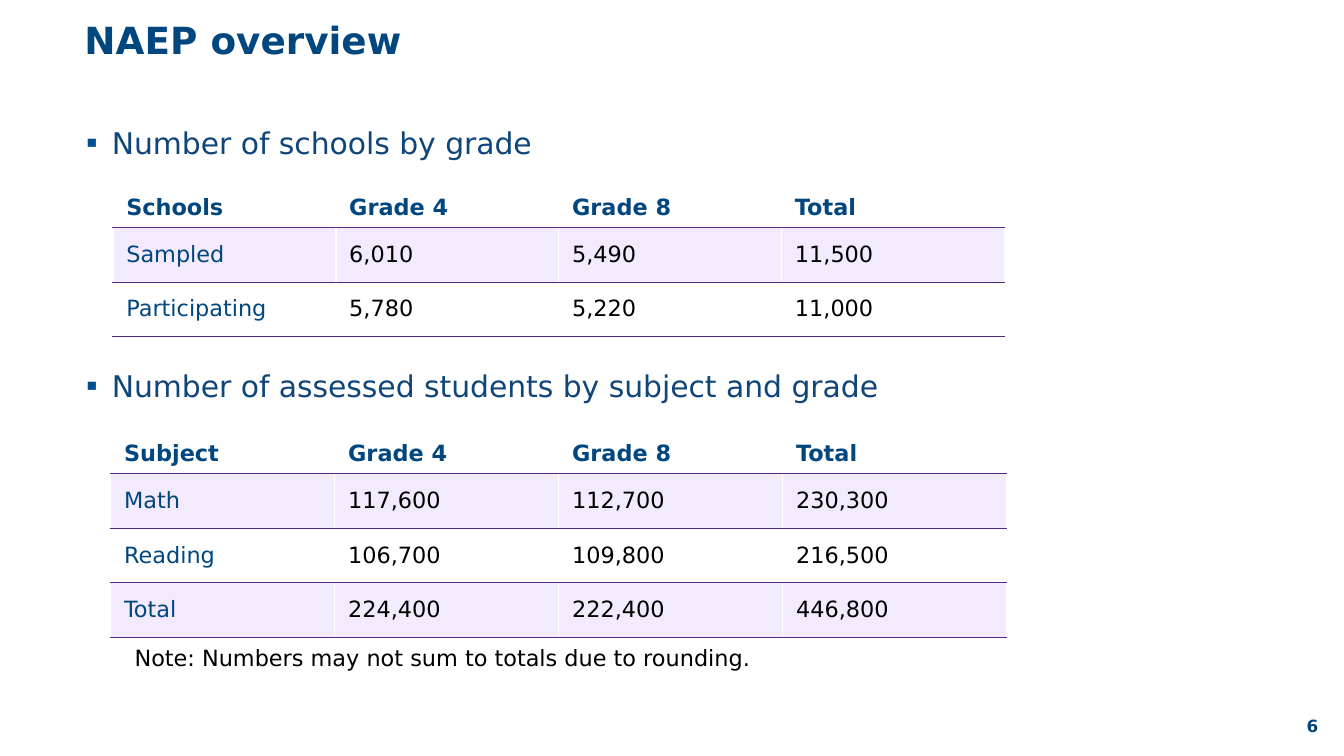
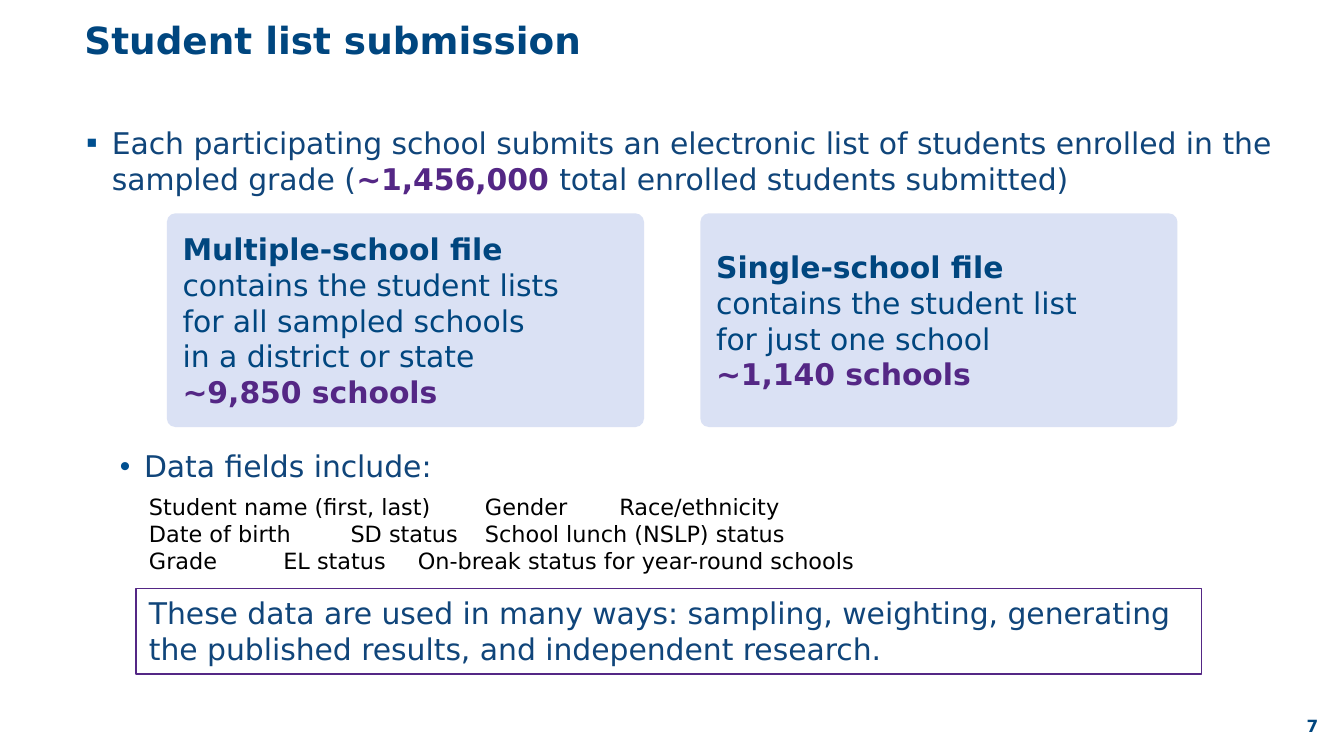
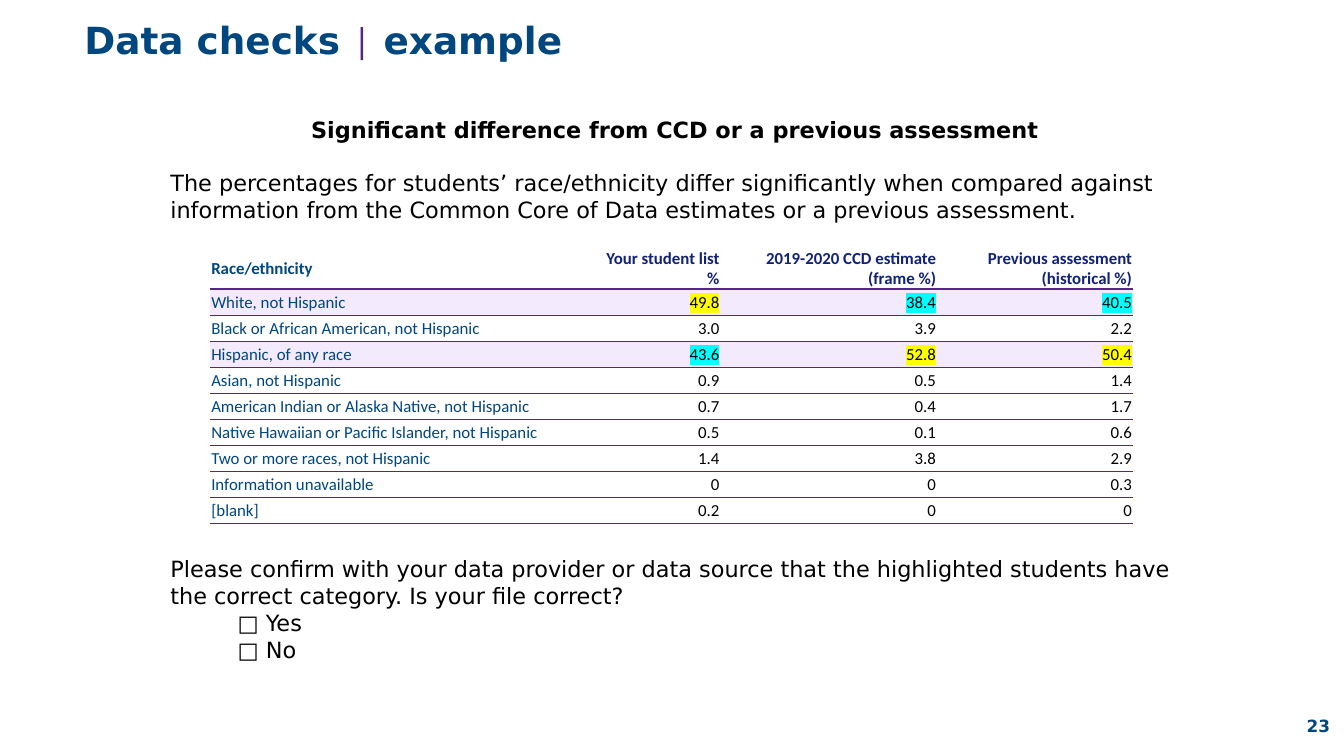
from dataclasses import dataclass, field
from typing import Optional

from lxml import etree
from pptx import Presentation
from pptx.dml.color import RGBColor
from pptx.enum.shapes import MSO_SHAPE
from pptx.enum.text import MSO_ANCHOR, MSO_AUTO_SIZE, PP_ALIGN
from pptx.oxml.ns import qn
from pptx.util import Pt

LEFT, CENTER, RIGHT = PP_ALIGN.LEFT, PP_ALIGN.CENTER, PP_ALIGN.RIGHT
TOP, MIDDLE, BOTTOM = MSO_ANCHOR.TOP, MSO_ANCHOR.MIDDLE, MSO_ANCHOR.BOTTOM
GROW, FIXED = MSO_AUTO_SIZE.SHAPE_TO_FIT_TEXT, MSO_AUTO_SIZE.NONE
RECT, ROUND_RECT = MSO_SHAPE.RECTANGLE, MSO_SHAPE.ROUNDED_RECTANGLE
TITLE_ONLY, TITLE_AND_BODY = 5, 1


@dataclass(frozen=True)
class Theme:
    navy: str = "00467F"
    body: str = "10457A"
    bullet: str = "004F90"
    header: str = "112277"
    purple: str = "542785"
    lavender: str = "F3EAFD"
    card: str = "C2CDED"
    white: str = "FFFFFF"
    black: str = "000000"
    yellow: str = "FFFF00"
    cyan: str = "00FFFF"
    font: str = "DejaVu Sans"
    narrow: str = "Calibri"
    title_size: int = 20
    body_size: int = 16
    text_size: int = 12
    small_size: int = 9


T = Theme()


@dataclass(frozen=True)
class Box:
    left: float
    top: float
    width: float
    height: float

    def lengths(self) -> tuple:
        return Pt(self.left), Pt(self.top), Pt(self.width), Pt(self.height)


@dataclass(frozen=True)
class Piece:
    text: str
    color: str = T.body
    bold: bool = False
    font: str = T.font


@dataclass(frozen=True)
class Bullet:
    pieces: list
    char: str = "▪"
    level: int = 0
    margin: float = 18.7
    hang: float = 13.7
    scale: int = 110
    before: float = 0


@dataclass(frozen=True)
class Line:
    text: str
    bold: bool = False
    align: PP_ALIGN = LEFT
    before: float = 0
    margin: float = 0
    tabs: tuple = ()


@dataclass(frozen=True)
class Grid:
    box: Box
    widths: list
    heights: list
    rows: list
    shaded: tuple
    header_rule: float
    sides: Optional[str] = T.white
    header_anchor: MSO_ANCHOR = BOTTOM
    header_color: str = T.navy
    align: PP_ALIGN = LEFT
    font: str = T.font
    size: float = T.text_size
    inset: Optional[float] = None
    marks: dict = field(default_factory=dict)


TITLE_BOX = Box(38, 0, 660, 45)
BODY_BOX = Box(34, 63, 656, 301)
NUMBER_BOX = Box(700, 378, 20, 21.6)


def rgb(color: str) -> RGBColor:
    return RGBColor.from_string(color)


def style(r, size: float, color: str, bold: bool = False, font: str = T.font) -> None:
    r.font.size, r.font.bold, r.font.name = Pt(size), bold, font
    r.font.color.rgb = rgb(color)


def write(p, pieces: list, size: float) -> None:
    for piece in pieces:
        r = p.add_run()
        r.text = piece.text
        style(r, size, piece.color, piece.bold, piece.font)


def add_color(parent, color: str):
    fill = etree.SubElement(parent, qn("a:solidFill"))
    return etree.SubElement(fill, qn("a:srgbClr"), val=color)


def set_margin(p, margin: float, hang: float = 0) -> None:
    pPr = p._p.get_or_add_pPr()
    pPr.set("marL", str(Pt(margin)))
    pPr.set("indent", str(-Pt(hang)))


def add_title(s, pieces: list) -> None:
    sp = s.shapes.title
    sp.left, sp.top, sp.width, sp.height = TITLE_BOX.lengths()
    tf = sp.text_frame
    tf.auto_size, tf.vertical_anchor = FIXED, MIDDLE
    p = tf.paragraphs[0]
    p.alignment, p.line_spacing = LEFT, 0.9
    write(p, pieces, T.title_size)


def add_number(s, number: int) -> None:
    tf = s.shapes.add_textbox(*NUMBER_BOX.lengths()).text_frame
    tf.margin_left = tf.margin_right = 0
    tf.vertical_anchor = MIDDLE
    tf.text = str(number)
    style(tf.paragraphs[0].runs[0], T.small_size, T.navy, True)


def add_slide(prs, layout: int, title: list, number: int):
    s = prs.slides.add_slide(prs.slide_layouts[layout])
    add_title(s, title)
    add_number(s, number)
    return s


def add_body(s, bullets: list) -> None:
    sp = s.placeholders[1]
    sp.left, sp.top, sp.width, sp.height = BODY_BOX.lengths()
    tf = sp.text_frame
    tf.auto_size = FIXED
    for i, bullet in enumerate(bullets):
        p = tf.add_paragraph() if i else tf.paragraphs[0]
        set_margin(p, bullet.margin, bullet.hang)
        pPr = p._p.get_or_add_pPr()
        etree.SubElement(etree.SubElement(pPr, qn("a:buClr")), qn("a:srgbClr"), val=T.bullet)
        etree.SubElement(pPr, qn("a:buSzPct"), val=str(bullet.scale * 1000))
        etree.SubElement(pPr, qn("a:buChar"), char=bullet.char)
        p.level = bullet.level
        p.space_before, p.space_after = Pt(bullet.before), Pt(6)
        write(p, bullet.pieces, T.body_size)


def add_text(s, box: Box, lines: list) -> None:
    tf = s.shapes.add_textbox(*box.lengths()).text_frame
    tf.word_wrap, tf.auto_size = True, GROW
    for i, line in enumerate(lines):
        p = tf.add_paragraph() if i else tf.paragraphs[0]
        p.text = line.text
        set_margin(p, line.margin)
        if line.tabs:
            tab_list = etree.SubElement(p._p.get_or_add_pPr(), qn("a:tabLst"))
            for tab in line.tabs:
                etree.SubElement(tab_list, qn("a:tab"), pos=str(Pt(tab)), algn="l")
        p.alignment = line.align
        if line.before:
            p.space_before = Pt(line.before)
        style(p.runs[0], T.text_size, T.black, line.bold)


def add_panel(s, kind: MSO_SHAPE, box: Box, text: str, anchor: MSO_ANCHOR):
    sp = s.shapes.add_shape(kind, *box.lengths())
    sp.shadow.inherit = False
    tf = sp.text_frame
    tf.word_wrap, tf.vertical_anchor = True, anchor
    tf.paragraphs[0].text = text
    tf.paragraphs[0].alignment = LEFT
    return sp


def add_card(s, box: Box, lines: list) -> None:
    """Translucent card: bold heading first, purple count last."""
    sp = add_panel(s, ROUND_RECT, box, "\v".join(lines), MIDDLE)
    sp.adjustments[0] = 0.04
    sp.line.fill.background()
    sp.fill.solid()
    sp.fill.fore_color.rgb = rgb(T.card)
    color = sp._element.spPr.find(qn("a:solidFill")).find(qn("a:srgbClr"))
    etree.SubElement(color, qn("a:alpha"), val="60000")
    heading, *details, count = sp.text_frame.paragraphs[0].runs
    style(heading, T.body_size, T.navy, True)
    for r in details:
        style(r, T.body_size, T.navy)
    style(count, T.body_size, T.purple, True)


def add_callout(s, box: Box, text: str) -> None:
    sp = add_panel(s, RECT, box, text, TOP)
    sp.fill.background()
    sp.line.color.rgb, sp.line.width = rgb(T.purple), Pt(1)
    style(sp.text_frame.paragraphs[0].runs[0], T.body_size, T.body)


def set_border(cell, edge: str, color: Optional[str], width: float) -> None:
    ln = etree.SubElement(cell._tc.get_or_add_tcPr(), qn(f"a:ln{edge}"), w=str(Pt(width)))
    if color:
        add_color(ln, color)
    else:
        etree.SubElement(ln, qn("a:noFill"))


def format_cell(cell, grid: Grid, row: int, col: int) -> None:
    above = {0: 1, 1: grid.header_rule}.get(row, 0.5)
    below = 0.5 if row else grid.header_rule
    set_border(cell, "L", grid.sides, 1)
    set_border(cell, "R", grid.sides, 1)
    set_border(cell, "T", T.purple if row else grid.sides, above)
    set_border(cell, "B", T.purple, below)
    if row in grid.shaded:
        cell.fill.solid()
        cell.fill.fore_color.rgb = rgb(T.lavender)
    else:
        cell.fill.background()
    if grid.inset is not None:
        cell.margin_left = cell.margin_right = cell.margin_top = Pt(grid.inset)
        cell.margin_bottom = 0
    cell.vertical_anchor = MIDDLE if row else grid.header_anchor
    p = cell.text_frame.paragraphs[0]
    p.alignment = grid.align if col else LEFT
    color = T.navy
    if col:
        color = T.black if row else grid.header_color
    r = p.runs[0]
    style(r, grid.size, color, row == 0, grid.font)
    if (row, col) in grid.marks:
        highlight = etree.Element(qn("a:highlight"))
        etree.SubElement(highlight, qn("a:srgbClr"), val=grid.marks[row, col])
        r._r.rPr.find(qn("a:solidFill")).addnext(highlight)


def add_grid(s, grid: Grid) -> None:
    table = s.shapes.add_table(len(grid.rows), len(grid.widths), *grid.box.lengths()).table
    table.first_row = table.horz_banding = False
    for column, width in zip(table.columns, grid.widths):
        column.width = Pt(width)
    for i, (values, height) in enumerate(zip(grid.rows, grid.heights)):
        table.rows[i].height = Pt(height)
        for j, value in enumerate(values):
            cell = table.cell(i, j)
            cell.text_frame.text = value
            format_cell(cell, grid, i, j)


def heading(text: str) -> Piece:
    return Piece(text, T.navy, True)


def overview_slide(prs) -> None:
    s = add_slide(prs, TITLE_AND_BODY, [heading("NAEP overview")], 6)
    add_body(s, [
        Bullet([Piece("Number of schools by grade")]),
        Bullet([Piece("Number of assessed students by subject and grade")], before=105),
    ])
    schools = [
        ("Schools", "Grade 4", "Grade 8", "Total"),
        ("Sampled", "6,010", "5,490", "11,500"),
        ("Participating", "5,780", "5,220", "11,000"),
    ]
    students = [
        ("Subject", "Grade 4", "Grade 8", "Total"),
        ("Math", "117,600", "112,700", "230,300"),
        ("Reading", "106,700", "109,800", "216,500"),
        ("Total", "224,400", "222,400", "446,800"),
    ]
    row_height = 29.2
    add_grid(s, Grid(Box(60.5, 92.7, 477.6, 3 * row_height), [119.4] * 4, [row_height] * 3,
                     schools, shaded=(1,), header_rule=1))
    add_grid(s, Grid(Box(59.3, 224.6, 480, 4 * row_height), [120] * 4, [row_height] * 4,
                     students, shaded=(1, 3), header_rule=0.5))
    add_text(s, Box(65, 341.5, 387, 21.8),
             [Line("Note: Numbers may not sum to totals due to rounding.")])


def submission_slide(prs) -> None:
    s = add_slide(prs, TITLE_AND_BODY, [heading("Student list submission")], 7)
    add_body(s, [
        Bullet([
            Piece("Each participating school submits an electronic list of students "
                  "enrolled in the sampled grade ("),
            Piece("~1,456,000 ", T.purple, True),
            Piece("total enrolled students submitted)"),
        ]),
        Bullet([Piece("Data fields include:")], "•", 1, 36, 13, 100, 129),
    ])
    cards = [
        ["Multiple-school file", "contains the student lists", "for all sampled schools",
         "in a district or state", "~9,850 schools"],
        ["Single-school file", "contains the student list", "for just one school",
         "~1,140 schools"],
    ]
    for i, lines in enumerate(cards):
        add_card(s, Box(89.4 + 285.8 * i, 114.3, 255.6, 114.5), lines)
    fields = [
        ("Student name (first, last)", "Gender", "Race/ethnicity"),
        ("Date of birth", "SD status", "School lunch (NSLP) status"),
        ("Grade", "EL status", "On-break status for year-round schools"),
    ]
    add_text(s, Box(72.7, 260.9, 558, 51),
             [Line("\t".join(names), tabs=(180, 288)) for names in fields])
    add_callout(s, Box(72.7, 315.3, 571, 46),
                "These data are used in many ways: sampling, weighting, generating "
                "the published results, and independent research.")


def checks_slide(prs) -> None:
    title = [heading("Data checks "), Piece("|", T.purple, font=T.narrow), heading(" example")]
    s = add_slide(prs, TITLE_ONLY, title, 23)
    rows = [
        ("Race/ethnicity", "Your student list %", "2019-2020 CCD estimate (frame %)",
         "Previous assessment (historical %)"),
        ("White, not Hispanic", "49.8", "38.4", "40.5"),
        ("Black or African American, not Hispanic", "3.0", "3.9", "2.2"),
        ("Hispanic, of any race", "43.6", "52.8", "50.4"),
        ("Asian, not Hispanic", "0.9", "0.5", "1.4"),
        ("American Indian or Alaska Native, not Hispanic", "0.7", "0.4", "1.7"),
        ("Native Hawaiian or Pacific Islander, not Hispanic", "0.5", "0.1", "0.6"),
        ("Two or more races, not Hispanic", "1.4", "3.8", "2.9"),
        ("Information unavailable", "0", "0", "0.3"),
        ("[blank]", "0.2", "0", "0"),
    ]
    marks = {(1, 1): T.yellow, (1, 2): T.cyan, (1, 3): T.cyan,
             (3, 1): T.cyan, (3, 2): T.yellow, (3, 3): T.yellow}
    add_grid(s, Grid(Box(112.5, 132.5, 494.6, 147.9), [206.6, 67, 116, 105],
                     [22.5] + [13.93] * 9, rows, shaded=(1, 3), header_rule=1, sides=None,
                     header_anchor=MIDDLE, header_color=T.header, align=RIGHT,
                     font=T.narrow, size=T.small_size, inset=0.7, marks=marks))
    add_text(s, Box(84.2, 58.5, 555, 65.5), [
        Line("Significant difference from CCD or a previous assessment", True, CENTER),
        Line("The percentages for students’ race/ethnicity differ significantly when compared "
             "against information from the Common Core of Data estimates or a previous "
             "assessment.", before=14.4),
    ])
    add_text(s, Box(84.2, 293.8, 555, 65.5), [
        Line("Please confirm with your data provider or data source that the highlighted "
             "students have the correct category. Is your file correct?"),
        Line("□ Yes", margin=36),
        Line("□ No", margin=36),
    ])


def main() -> None:
    prs = Presentation()
    prs.slide_width, prs.slide_height = Pt(720), Pt(405)
    overview_slide(prs)
    submission_slide(prs)
    checks_slide(prs)
    prs.save("out.pptx")


if __name__ == "__main__":
    main()
